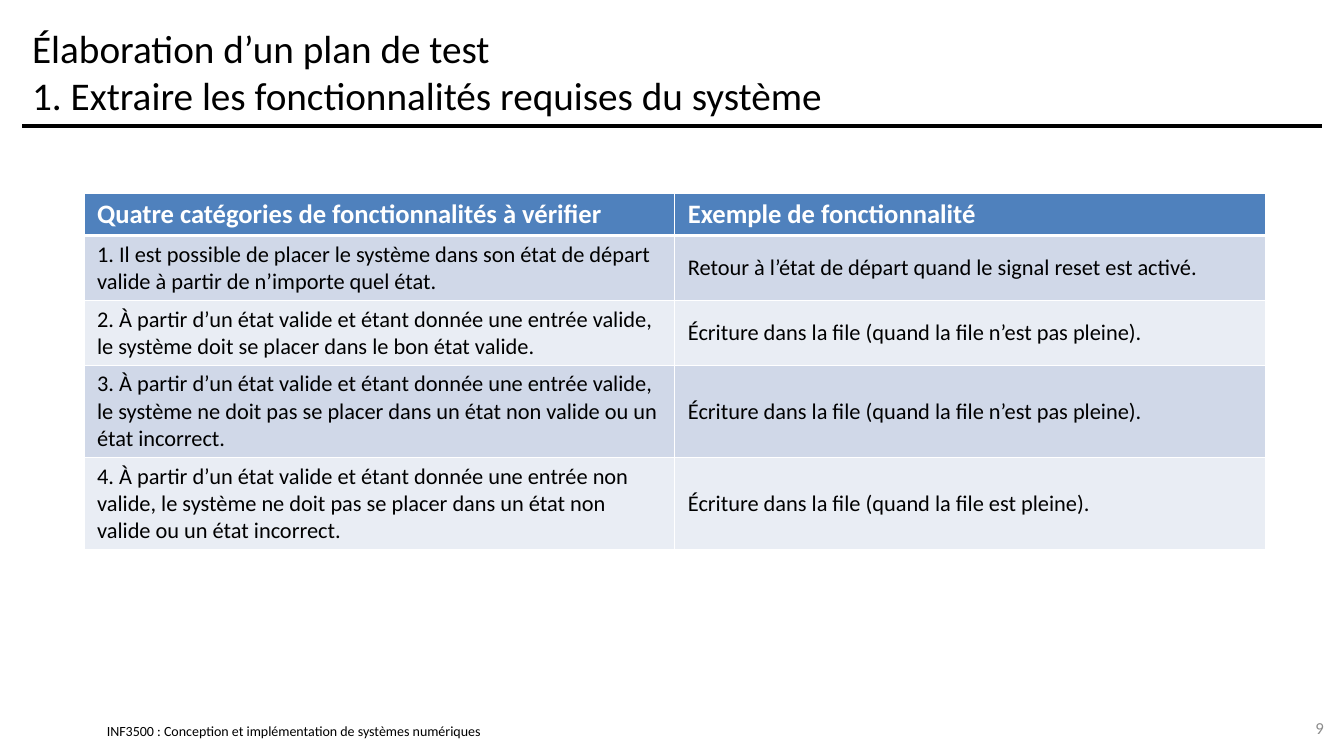
import pptx
import pptx.dml.color
import pptx.enum.shapes
import pptx.enum.text
import pptx.oxml.ns
import pptx.util
from lxml import etree

RGBColor = pptx.dml.color.RGBColor
BLACK = RGBColor(0x00, 0x00, 0x00)
WHITE = RGBColor(0xFF, 0xFF, 0xFF)
GREY = RGBColor(0x8C, 0x8C, 0x8C)
HEADER_BLUE = RGBColor(0x4F, 0x81, 0xBD)
BANDS = (RGBColor(0xD0, 0xD8, 0xE8), RGBColor(0xE9, 0xED, 0xF4))

ALIGN = pptx.enum.text.PP_ALIGN
ANCHOR = pptx.enum.text.MSO_ANCHOR

FEATURES = [
    ("Quatre catégories de fonctionnalités à vérifier",
     "Exemple de fonctionnalité"),
    ("1. Il est possible de placer le système dans son état de départ valide "
     "à partir de n’importe quel état.",
     "Retour à l’état de départ quand le signal reset est activé."),
    ("2. À partir d’un état valide et étant donnée une entrée valide, "
     "le système doit se placer dans le bon état valide.",
     "Écriture dans la file (quand la file n’est pas pleine)."),
    ("3. À partir d’un état valide et étant donnée une entrée valide, "
     "le système ne doit pas se placer dans un état non valide ou un état incorrect.",
     "Écriture dans la file (quand la file n’est pas pleine)."),
    ("4. À partir d’un état valide et étant donnée une entrée non valide, "
     "le système ne doit pas se placer dans un état non valide ou un état incorrect.",
     "Écriture dans la file (quand la file est pleine)."),
]


def write_text(paragraph, text, *, size, font="Calibri", color=BLACK, bold=False,
               align=ALIGN.LEFT):
    paragraph.text = text
    paragraph.alignment = align
    paragraph.font.name = font
    paragraph.font.size = pptx.util.Pt(size)
    paragraph.font.bold = bold
    paragraph.font.color.rgb = color


def set_margins(target, horizontal, vertical):
    target.margin_left = target.margin_right = pptx.util.Inches(horizontal)
    target.margin_top = target.margin_bottom = pptx.util.Inches(vertical)


def add_border(cell, side, width, color=WHITE):
    """Draw one side of a cell: L, R, T or B, in that order."""
    namespace = pptx.oxml.ns.qn
    properties = cell._tc.get_or_add_tcPr()
    line = etree.SubElement(properties, namespace(f"a:ln{side}"),
                            w=str(pptx.util.Pt(width)))
    fill = etree.SubElement(line, namespace("a:solidFill"))
    etree.SubElement(fill, namespace("a:srgbClr"), val=str(color))


class SlideBuilder:
    """Places elements by percentages of the slide's width and height."""

    def __init__(self, presentation):
        self.width = presentation.slide_width
        self.height = presentation.slide_height
        self.slide = presentation.slides.add_slide(presentation.slide_layouts[6])

    def across(self, percent):
        return round(self.width * percent / 100)

    def down(self, percent):
        return round(self.height * percent / 100)

    def box(self, left, top, width, height):
        return self.across(left), self.down(top), self.across(width), self.down(height)

    def text(self, text, area, margins=(0.1, 0.05), **text_format):
        frame = self.slide.shapes.add_textbox(*self.box(*area)).text_frame
        frame.word_wrap = True
        frame.vertical_anchor = ANCHOR.MIDDLE
        set_margins(frame, *margins)
        write_text(frame.paragraphs[0], text, **text_format)

    def rule(self, left, right, top, width):
        connector = self.slide.shapes.add_connector(
            pptx.enum.shapes.MSO_CONNECTOR.STRAIGHT,
            self.across(left), self.down(top), self.across(right), self.down(top))
        connector.line.color.rgb = BLACK
        connector.line.width = pptx.util.Pt(width)
        etree.SubElement(connector._element.spPr, pptx.oxml.ns.qn("a:effectLst"))

    def table(self, rows, left, top, width, row_heights):
        area = self.box(left, top, width, sum(row_heights))
        table = self.slide.shapes.add_table(len(rows), len(rows[0]), *area).table
        table.horz_banding = False
        for row, height in zip(table.rows, row_heights):
            row.height = self.down(height)
        for row_index, texts in enumerate(rows):
            for column_index, text in enumerate(texts):
                self.cell(table.cell(row_index, column_index), text, row_index)

    def cell(self, cell, text, row_index):
        is_header = row_index == 0
        borders = {"L": 1, "R": 1, "T": 3 if row_index == 1 else 1,
                   "B": 3 if is_header else 1}
        for side, width in borders.items():
            add_border(cell, side, width)
        cell.fill.solid()
        cell.fill.fore_color.rgb = HEADER_BLUE if is_header else BANDS[(row_index - 1) % 2]
        cell.vertical_anchor = ANCHOR.TOP if is_header else ANCHOR.MIDDLE
        set_margins(cell, 0.13, 0.05)
        write_text(cell.text_frame.paragraphs[0], text, size=19 if is_header else 16,
                   color=WHITE if is_header else BLACK, bold=is_header)


def main():
    presentation = pptx.Presentation()
    presentation.slide_width = pptx.util.Inches(13.33)
    presentation.slide_height = pptx.util.Inches(7.5)
    builder = SlideBuilder(presentation)
    builder.text("INF3500 : Conception et implémentation de systèmes numériques",
                 (7.95, 95.6, 38.33, 2.27), margins=(0, 0), size=10)
    builder.rule(1.65, 98.35, 16.67, width=3)
    builder.text("Élaboration d’un plan de test\n"
                 "1. Extraire les fonctionnalités requises du système",
                 (1.65, 2.27, 96.7, 14.4), size=28)
    builder.text("9", (94.22, 93.6, 5.03, 5.33), size=12, color=GREY, align=ALIGN.RIGHT)
    builder.table(FEATURES, 6.25, 25.6, 87.92, (5.5, 8.6, 8.6, 12.2, 12.2))
    presentation.save("out.pptx")


if __name__ == "__main__":
    main()
